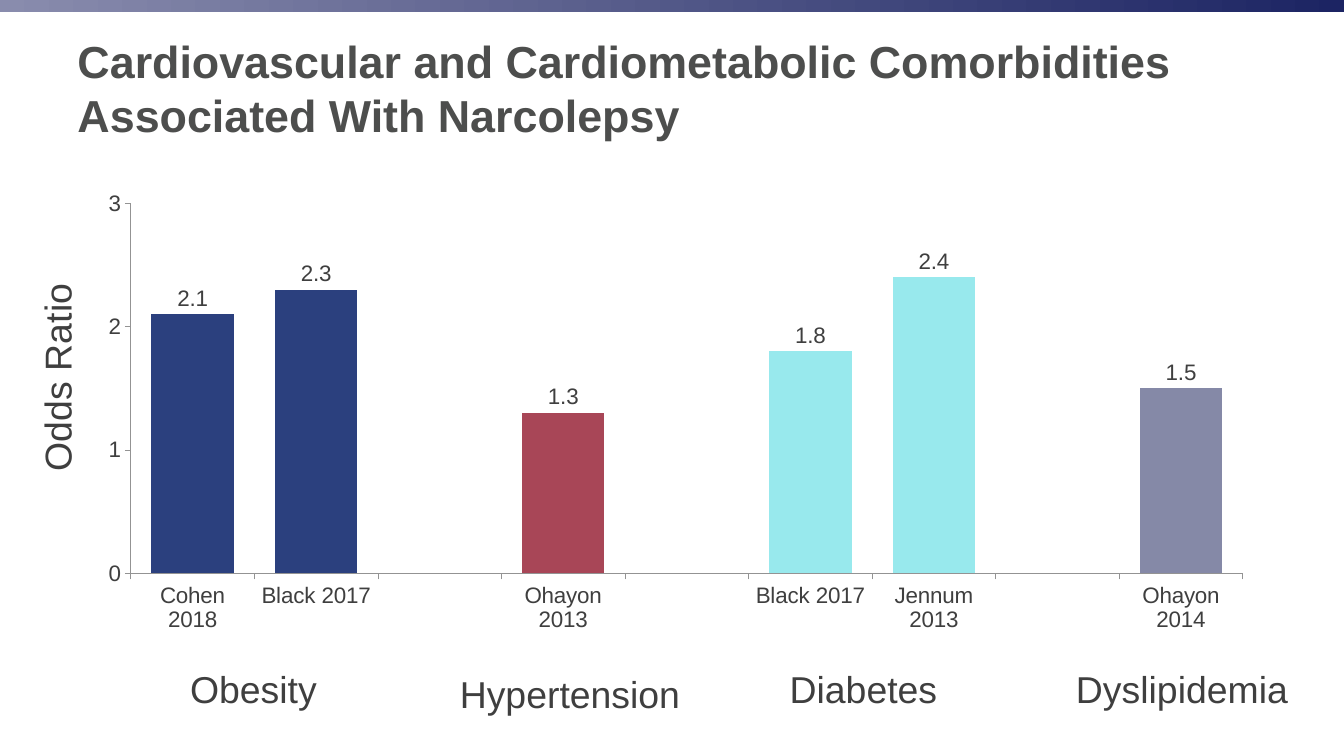
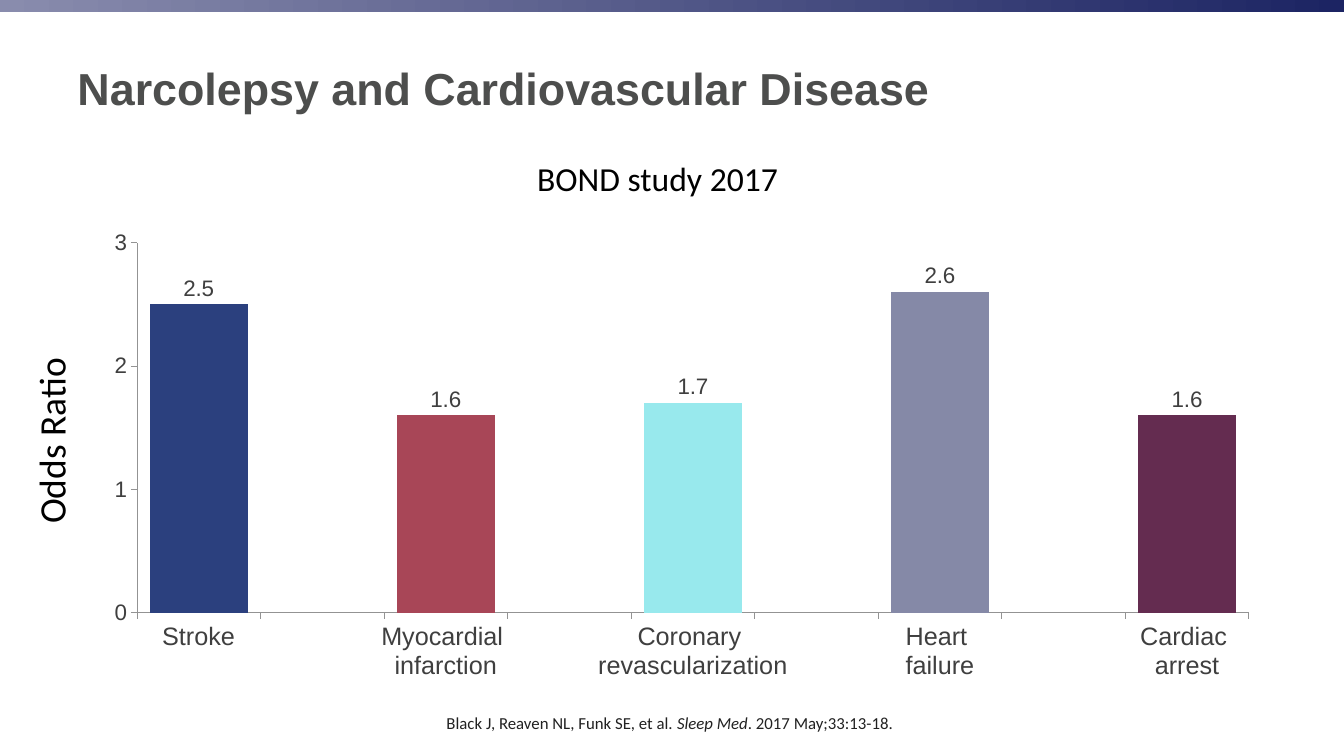
from lxml import etree
from pptx import Presentation
from pptx.chart.data import CategoryChartData
from pptx.dml.color import RGBColor
from pptx.enum.chart import XL_CHART_TYPE as ChartType
from pptx.enum.chart import XL_LABEL_POSITION as LabelPosition
from pptx.enum.chart import XL_TICK_MARK as TickMark
from pptx.enum.shapes import MSO_SHAPE as Shape
from pptx.enum.text import MSO_ANCHOR as Anchor
from pptx.enum.text import MSO_AUTO_SIZE as AutoSize
from pptx.enum.text import PP_ALIGN as Align
from pptx.oxml.ns import qn
from pptx.util import Inches, Pt

COLORS = {
    "band_start": "898CAD",
    "band_end": "1C2463",
    "title": "4D4E4D",
    "text": "3F3F3F",
    "black": "000000",
    "citation": "212121",
    "axis": "939393",
    "navy": "2B407E",
    "red": "A84657",
    "aqua": "98E9ED",
    "lavender": "8589A7",
    "plum": "642C50",
}
PLOT_AREA = {"x": 0.071, "y": 0.187, "w": 0.913, "h": 0.619}
LABEL_SIZE = 26.7


def rgb(name):
    return RGBColor.from_string(COLORS[name])


def set_font(font, size, color="text", name="Arial", bold=False):
    font.size = Pt(size)
    font.name = name
    font.bold = bold
    font.color.rgb = rgb(color)


def place_plot(chart):
    """Fix the inner plot area at the shared fractions of the chart."""
    plot_area = chart.element.find(f"{qn('c:chart')}/{qn('c:plotArea')}")
    for old in plot_area.findall(qn("c:layout")):
        plot_area.remove(old)
    layout = etree.Element(qn("c:layout"))
    manual = etree.SubElement(layout, qn("c:manualLayout"))
    settings = {"layoutTarget": "inner", "xMode": "edge", "yMode": "edge", **PLOT_AREA}
    for tag, value in settings.items():
        etree.SubElement(manual, qn(f"c:{tag}")).set("val", str(value))
    plot_area.insert(0, layout)


class Slides:
    """Holds the deck, its shared style and the current page."""

    def __init__(self):
        self.deck = Presentation()
        self.deck.slide_width = Inches(13.33)
        self.deck.slide_height = Inches(7.5)
        self.page = None

    def new_page(self, title):
        self.page = self.deck.slides.add_slide(self.deck.slide_layouts[6])
        self.band()
        self.text([title], 0.67, 0.22, 11.75, 1.3, size=32, color="title",
                  bold=True, align=Align.LEFT, anchor=Anchor.MIDDLE, grow=False)

    def band(self):
        band = self.page.shapes.add_shape(
            Shape.RECTANGLE, 0, 0, self.deck.slide_width, Inches(0.12))
        band.shadow.inherit = False
        band.line.fill.background()
        band.fill.gradient()
        band.fill.gradient_angle = 0
        for stop, position, color in zip(
                band.fill.gradient_stops, (0, 1), ("band_start", "band_end")):
            stop.position = position
            stop.color.rgb = rgb(color)

    def text(self, spans, left, top, width, height, size=LABEL_SIZE, color="text",
             font="Arial", bold=False, align=Align.CENTER, anchor=Anchor.TOP,
             grow=True, wrap=True, rotation=0):
        """Add one paragraph; every second span is italic."""
        box = self.page.shapes.add_textbox(
            Inches(left), Inches(top), Inches(width), Inches(height))
        box.rotation = rotation
        frame = box.text_frame
        frame.word_wrap = wrap
        frame.auto_size = AutoSize.SHAPE_TO_FIT_TEXT if grow else AutoSize.NONE
        frame.vertical_anchor = anchor
        para = frame.paragraphs[0]
        para.alignment = align
        set_font(para.font, size, color, font, bold)
        for index, words in enumerate(spans):
            span = para.add_run()
            span.text = words
            if index % 2:
                span.font.italic = True

    def axis_title(self, left, top, **style):
        self.text(["Odds Ratio"], left, top, 2.43, 0.55, rotation=270, **style)

    def column_chart(self, left, top, bars, gap, category_size):
        """Draw (category, value, color) bars; None leaves an empty slot."""
        slots = [bar or ("", None, None) for bar in bars]
        data = CategoryChartData()
        data.categories = [category for category, _, _ in slots]
        data.add_series("Series 1", [value for _, value, _ in slots])
        chart = self.page.shapes.add_chart(
            ChartType.COLUMN_CLUSTERED, Inches(left), Inches(top),
            Inches(12.08), Inches(5.93), data).chart
        chart.has_title = False
        chart.has_legend = False
        set_font(chart.font, 18)
        place_plot(chart)
        self.style_axes(chart, category_size)

        plot = chart.plots[0]
        plot.gap_width = gap
        plot.vary_by_categories = False
        series = plot.series[0]
        series.format.fill.solid()
        series.format.fill.fore_color.rgb = rgb("navy")
        for index, (_, _, color) in enumerate(slots):
            if color and color != "navy":
                fill = series.points[index].format.fill
                fill.solid()
                fill.fore_color.rgb = rgb(color)
        labels = series.data_labels
        labels.show_value = True
        labels.position = LabelPosition.OUTSIDE_END
        set_font(labels.font, 16)

    def style_axes(self, chart, category_size):
        for axis, size in ((chart.category_axis, category_size), (chart.value_axis, 16)):
            axis.has_major_gridlines = False
            axis.major_tick_mark = TickMark.OUTSIDE
            axis.minor_tick_mark = TickMark.NONE
            axis.format.line.color.rgb = rgb("axis")
            axis.format.line.width = Pt(0.5)
            set_font(axis.tick_labels.font, size)
        chart.value_axis.minimum_scale = 0
        chart.value_axis.maximum_scale = 3
        chart.value_axis.major_unit = 1


def comorbidities(slides):
    slides.new_page(
        "Cardiovascular and Cardiometabolic Comorbidities Associated With Narcolepsy")
    slides.column_chart(0.44, 0.91, [
        ("Cohen 2018", 2.1, "navy"),
        ("Black 2017", 2.3, "navy"),
        None,
        ("Ohayon 2013", 1.3, "red"),
        None,
        ("Black 2017", 1.8, "aqua"),
        ("Jennum 2013", 2.4, "aqua"),
        None,
        ("Ohayon 2014", 1.5, "lavender"),
    ], gap=50, category_size=16)
    slides.axis_title(-0.65, 3.47)
    for condition, left, top, width in (
            ("Obesity", 1.55, 6.56, 1.93),
            ("Hypertension", 4.43, 6.61, 2.45),
            ("Diabetes", 7.34, 6.56, 2.45),
            ("Dyslipidemia", 10.5, 6.56, 2.45)):
        slides.text([condition], left, top, width, 0.55)


def cardiovascular_disease(slides):
    slides.new_page("Narcolepsy and Cardiovascular Disease")
    slides.column_chart(0.5, 1.3, [
        ("Stroke", 2.5, "navy"),
        None,
        ("Myocardial \ninfarction", 1.6, "red"),
        None,
        ("Coronary \nrevascularization", 1.7, "aqua"),
        None,
        ("Heart \nfailure", 2.6, "lavender"),
        None,
        ("Cardiac \narrest", 1.6, "plum"),
    ], gap=26, category_size=18)
    slides.axis_title(-0.71, 4.1, font="Calibri", color="black")
    slides.text(["BOND study 2017"], 5.23, 1.52, 2.61, 0.5, size=24,
                font="Calibri", color="black", align=Align.LEFT)
    slides.text(["Black J, Reaven NL, Funk SE, et al. ", "Sleep Med", ". 2017 May;33:13-18."],
                4.33, 7.02, 4.68, 0.3, size=12, font="Calibri", color="citation",
                align=Align.LEFT, wrap=False)


def main():
    slides = Slides()
    comorbidities(slides)
    cardiovascular_disease(slides)
    slides.deck.save("out.pptx")


if __name__ == "__main__":
    main()
